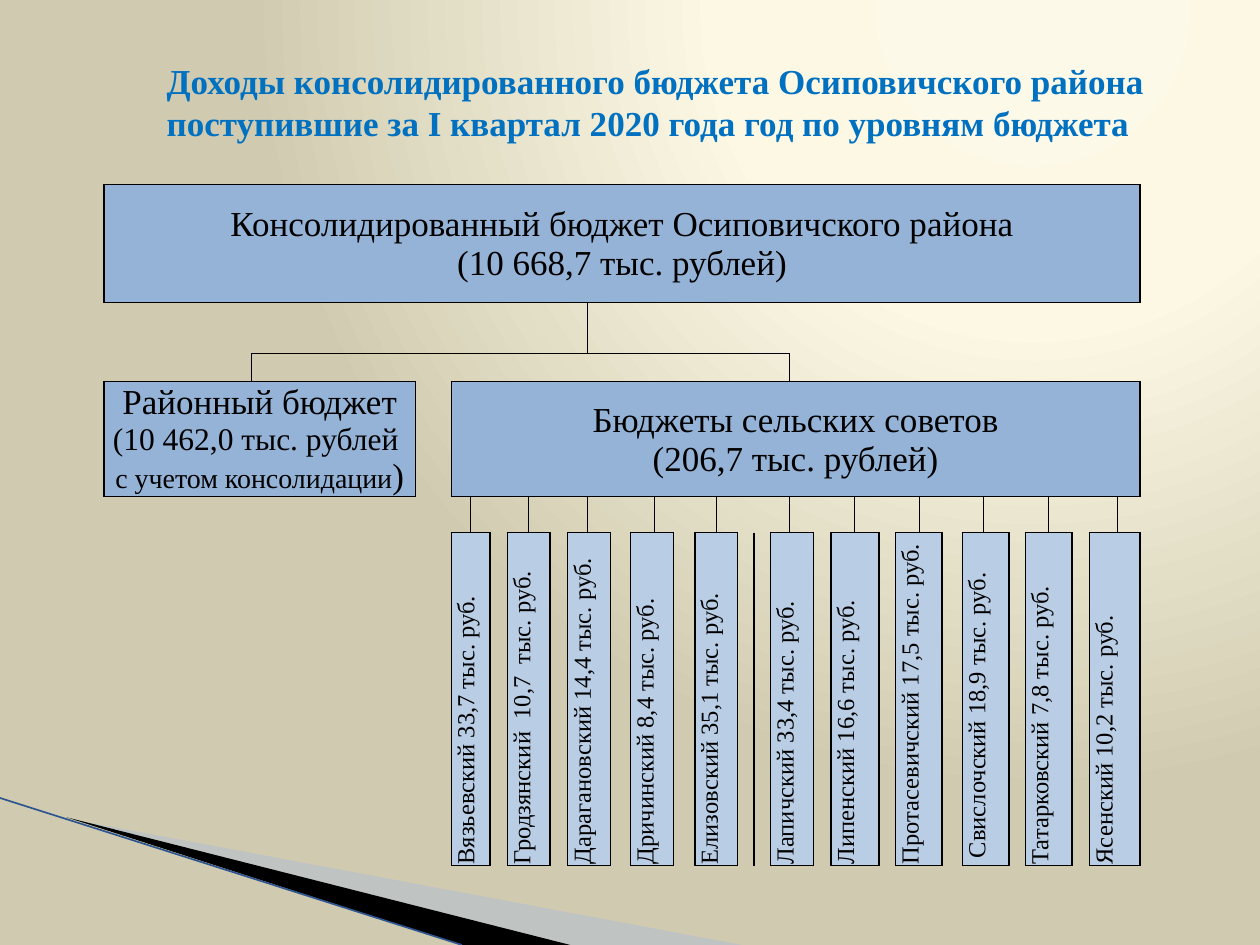
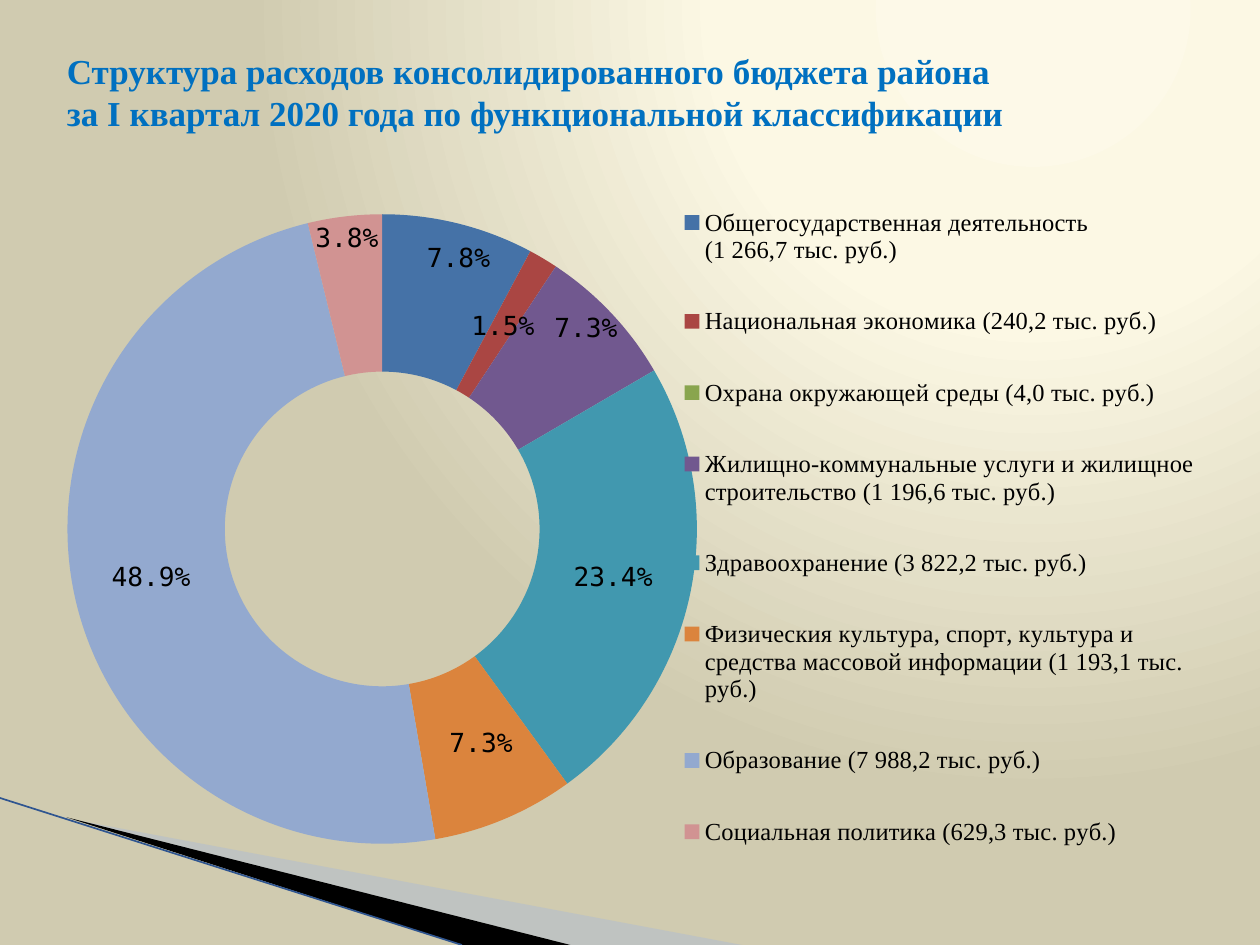
from lxml.etree import QName, SubElement
from pptx import Presentation
from pptx.chart.data import CategoryChartData
from pptx.dml.color import RGBColor
from pptx.enum.chart import XL_CHART_TYPE, XL_LEGEND_POSITION
from pptx.enum.shapes import MSO_CONNECTOR
from pptx.enum.text import MSO_ANCHOR, PP_ALIGN
from pptx.oxml import parse_xml
from pptx.oxml.ns import nsdecls, qn
from pptx.util import Pt

BLACK = RGBColor(0x00, 0x00, 0x00)
TITLE = RGBColor(0x00, 0x70, 0xC0)
DARK = RGBColor(0x95, 0xB3, 0xD7)
LIGHT = RGBColor(0xB9, 0xCD, 0xE5)
MIST = RGBColor(0xA7, 0xB9, 0xDB)
EDGE = RGBColor(0x2F, 0x55, 0x90)
GLOW = ((0, RGBColor(0xFD, 0xF9, 0xE8)), (40, RGBColor(0xFC, 0xF8, 0xE4)), (100, RGBColor(0xD0, 0xCB, 0xB0)))
SLICES = [RGBColor.from_string(c) for c in (
    "4572A7", "AA4643", "89A54E", "71588F", "4198AF", "DB843D", "93A9CF", "D19392")]
SERIF = "Times New Roman"
MONO = "DejaVu Sans Mono"
PARTS = ["lnL", "lnR", "lnT", "lnB", "solidFill", "noFill"]

COUNCILS = [
    ("Вязьевский 33,7 тыс. руб.", 11.2, 10.8, [10.1]),
    ("Гродзянский  10,7  тыс. руб.", 12.2, 12.2, [10.1]),
    ("Дарагановский 14,4 тыс. руб.", 11.5, 13, [11.5]),
    ("Дричинский 8,4 тыс. руб.", 13.7, 10.8, [12.2]),
    ("Елизовский 35,1 тыс. руб.", 12.2, 12.2, [9.4, 9.6]),
    ("Лапичский 33,4 тыс. руб.", 10.8, 13.7, [10.1]),
    ("Липенский 16,6 тыс. руб.", 13, 14.4, [9.4]),
    ("Протасевичский 17,5 тыс. руб.", 13.7, 13, [11.5]),
    (" Свислочский 18,9 тыс. руб.", 12.2, 14.4, [9.4]),
    ("Татарковский 7,8 тыс. руб.", 13, 13.7, [10.1]),
    ("Ясенский 10,2 тыс. руб.", 15.8, 13, []),
]
SPENDING = [
    ("Общегосударственная деятельность\n(1 266,7 тыс. руб.)", 0.078),
    ("Национальная экономика (240,2 тыс. руб.)", 0.015),
    ("Охрана окружающей среды (4,0 тыс. руб.)", None),
    ("Жилищно-коммунальные услуги и жилищное строительство (1 196,6 тыс. руб.)", 0.073),
    ("Здравоохранение (3 822,2 тыс. руб.)", 0.234),
    ("Физическия культура, спорт, культура и средства массовой информации (1 193,1 тыс. руб.)", 0.073),
    ("Образование (7 988,2 тыс. руб.)", 0.489),
    ("Социальная политика (629,3 тыс. руб.)", 0.038),
]
SHIFTS = {0: (0.016, -0.058), 3: (0.027, -0.053), 5: (0.006, -0.004), 7: (-0.006, -0.078)}


def layout(inner=False, mode="", **parts):
    target = '<c:layoutTarget val="inner"/>' if inner else ""
    modes = "".join(f'<c:{k}Mode val="{mode}"/>' for k in "xy") if mode else ""
    sizes = "".join(f'<c:{k} val="{v}"/>' for k, v in parts.items())
    return parse_xml(f'<c:layout {nsdecls("c")}><c:manualLayout>{target}{modes}{sizes}'
                     '</c:manualLayout></c:layout>')


class Deck:
    def __init__(self):
        self.prs = Presentation()
        self.prs.slide_width, self.prs.slide_height = Pt(720), Pt(540)
        self.base = self.prs.slide_layouts[5]
        self.slide = None
        self.glow()

    def glow(self):
        master = self.prs.slide_master
        master.background.fill.solid()
        stops = "".join(f'<a:gs pos="{p * 1000}"><a:srgbClr val="{c}"/></a:gs>' for p, c in GLOW)
        grad = parse_xml(
            f'<a:gradFill {nsdecls("a")} rotWithShape="1"><a:gsLst>{stops}</a:gsLst>'
            '<a:path path="circle"><a:fillToRect l="65000" t="0" r="0" b="98000"/></a:path></a:gradFill>')
        back = next(master.element.iter(qn("p:bgPr")))
        back.replace(back[0], grad)

    def add(self, lines, left, top, width, height):
        first = self.slide is None
        self.slide = self.prs.slides.add_slide(self.base)
        if first:
            self.corner()
        title = self.slide.shapes.title
        title.left, title.top, title.width, title.height = Pt(left), Pt(top), Pt(width), Pt(height)
        frame = title.text_frame
        frame.vertical_anchor = MSO_ANCHOR.MIDDLE
        para = frame.paragraphs[0]
        para.alignment = PP_ALIGN.LEFT
        for i, line in enumerate(lines):
            if i:
                para.add_line_break()
            self.run(para, line, 20, TITLE, True)

    def run(self, para, text, size, color=BLACK, bold=False):
        run = para.add_run()
        run.text = text
        self.style(run.font, size, SERIF, color)
        run.font.bold = bold

    def style(self, font, size, name, color=BLACK):
        font.size, font.name = Pt(size), name
        font.color.rgb = color

    def corner(self):
        self.wedge([(40, 468), (424, 540), (325, 540)], MIST, 40)
        self.wedge([(38, 467), (326, 540), (264, 540)], BLACK)
        line = self.slide.shapes.add_connector(MSO_CONNECTOR.STRAIGHT, 0, Pt(456), Pt(264), Pt(540))
        line.line.color.rgb, line.line.width = EDGE, Pt(0.95)
        SubElement(line.element.spPr, qn("a:effectLst"))
        self.share(line)

    def wedge(self, points, color, alpha=100):
        form = self.slide.shapes.build_freeform(*points[0], scale=Pt(1))
        form.add_line_segments(points[1:], close=True)
        shape = form.convert_to_shape()
        shape.shadow.inherit = False
        shape.fill.solid()
        shape.fill.fore_color.rgb = color
        shape.line.fill.background()
        if alpha < 100:
            tint = next(shape.element.spPr.iter(qn("a:srgbClr")))
            SubElement(tint, qn("a:alpha"), val=str(alpha * 1000))
        self.share(shape)

    def share(self, shape):
        self.base.shapes.element.append(shape.element)

    def table(self, left, top, cols, rows):
        frame = self.slide.shapes.add_table(
            len(rows), len(cols), Pt(left), Pt(top), Pt(sum(cols)), Pt(sum(rows)))
        grid = frame.table
        grid.first_row = grid.horz_banding = False
        next(frame.element.iter(qn("a:tableStyleId"))).text = "{2D5ABB26-0587-4C30-8999-92F81FD0307C}"
        for col, width in zip(grid.columns, cols):
            col.width = Pt(width)
        for row, height in zip(grid.rows, rows):
            row.height = Pt(height)
        for cell in grid.iter_cells():
            cell.margin_left = cell.margin_right = cell.margin_top = Pt(0.7)
            cell.margin_bottom = 0
            cell.fill.background()
            para = cell.text_frame.paragraphs[0]
            SubElement(para._p, qn("a:endParaRPr"), sz="500")
        return grid

    def edge(self, cell, sides, width):
        props = cell._tc.get_or_add_tcPr()
        for side in sides:
            props.append(parse_xml(
                f'<a:ln{side} {nsdecls("a")} w="{Pt(width)}"><a:solidFill><a:srgbClr val="{BLACK}"/>'
                f'</a:solidFill></a:ln{side}>'))
        props[:] = sorted(props, key=lambda e: PARTS.index(QName(e).localname))

    def box(self, grid, row, first, last, lines, color, turn=False):
        cell = grid.cell(row, first)
        cell.merge(grid.cell(row, last))
        cell.fill.solid()
        cell.fill.fore_color.rgb = color
        cell.vertical_anchor = MSO_ANCHOR.MIDDLE
        if turn:
            cell._tc.get_or_add_tcPr().set("vert", "vert270")
        frame = cell.text_frame
        for i, line in enumerate(lines):
            para = frame.add_paragraph() if i else frame.paragraphs[0]
            para.alignment = PP_ALIGN.LEFT if turn else PP_ALIGN.CENTER
            for text, size in line:
                self.run(para, text, size)
        for col in range(first, last + 1):
            sides = {first: "LRTB", last: "RTB"}.get(col, "TB")
            self.edge(grid.cell(row, col), sides, 1)

    def ring(self, left, top, width, height, items):
        data = CategoryChartData(number_format="0.0%")
        data.categories = [name for name, share in items]
        data.add_series("Series 1", [share for name, share in items])
        chart = self.slide.shapes.add_chart(
            XL_CHART_TYPE.DOUGHNUT, Pt(left), Pt(top), Pt(width), Pt(height), data).chart
        self.style(chart.font, 18, MONO)
        chart.has_title = False
        chart.has_legend = True
        legend = chart.legend
        legend.position = XL_LEGEND_POSITION.RIGHT
        legend.include_in_layout = False
        self.style(legend.font, 14, SERIF)
        self.place(legend._element, layout(mode="edge", x=0.522, y=0, w=0.46, h=1), "c:legendPos")
        area = next(chart._chartSpace.iter(qn("c:plotArea")))
        for old in area.findall(qn("c:layout")):
            area.remove(old)
        area.insert(0, layout(True, "edge", x=0.01, y=0.068, w=0.548, h=0.869))
        plot = chart.plots[0]
        plot.vary_by_categories = True
        next(area.iter(qn("c:holeSize"))).set("val", "50")
        series = plot.series[0]
        labels = series.data_labels
        labels.show_value = True
        labels.number_format, labels.number_format_is_linked = "0.0%", False
        self.style(labels.font, 15, MONO)
        for i, color in enumerate(SLICES):
            fill = series.points[i].format.fill
            fill.solid()
            fill.fore_color.rgb = color
        for i in SHIFTS:
            self.style(series.points[i].data_label.font, 15, MONO)
        for label in area.iter(qn("c:dLbl")):
            x, y = SHIFTS[int(label[0].get("val"))]
            label.insert(1, layout(x=x, y=y))
            label.insert(2, parse_xml(f'<c:numFmt {nsdecls("c")} formatCode="0.0%" sourceLinked="0"/>'))

    def place(self, parent, child, after):
        for old in parent.findall(qn("c:layout")):
            parent.remove(old)
        parent.find(qn(after)).addnext(child)


def income(deck):
    deck.add(["Доходы консолидированного бюджета Осиповичского района поступившие "
              "за I квартал 2020 года год по уровням бюджета"], 88, 21.6, 584, 72.7)
    cols, starts = [84.2, 93.6, 20.6], []
    for name, left, right, gaps in COUNCILS:
        starts.append(len(cols))
        cols += [left, right, *gaps]
    grid = deck.table(59.5, 105.5, cols, [67.4, 29.2, 16, 65.7, 20.6, 190.3])
    end = len(cols) - 1
    deck.box(grid, 0, 0, end, [[("Консолидированный бюджет Осиповичского района", 20)],
                               [("(10 668,7 тыс. рублей)", 20)]], DARK)
    deck.box(grid, 3, 0, 1, [[("Районный бюджет", 20)], [("(10 462,0 тыс. рублей ", 18)],
                             [("с учетом консолидации", 16), (")", 20)]], DARK)
    deck.box(grid, 3, 3, end, [[("Бюджеты сельских советов", 20)],
                               [("(206,7 тыс. рублей)", 20)]], DARK)
    for start, council in zip(starts, COUNCILS):
        deck.box(grid, 5, start, start + 1, [[(council[0], 14)]], LIGHT, True)
        deck.edge(grid.cell(4, start), "R", 0.5)
    for col in range(1, 20):
        deck.edge(grid.cell(1, col), "RB" if col == 9 else "B", 0.5)
    for col in (0, 19):
        deck.edge(grid.cell(2, col), "R", 0.5)
    deck.edge(grid.cell(5, 17), "R", 1)


def main():
    deck = Deck()
    income(deck)
    deck.add(["Структура расходов консолидированного бюджета района",
              "за I квартал 2020 года по функциональной классификации"], 31, 21.6, 669, 61.2)
    deck.ring(25.2, 94.3, 680.4, 414, SPENDING)
    deck.prs.save("out.pptx")


if __name__ == "__main__":
    main()
